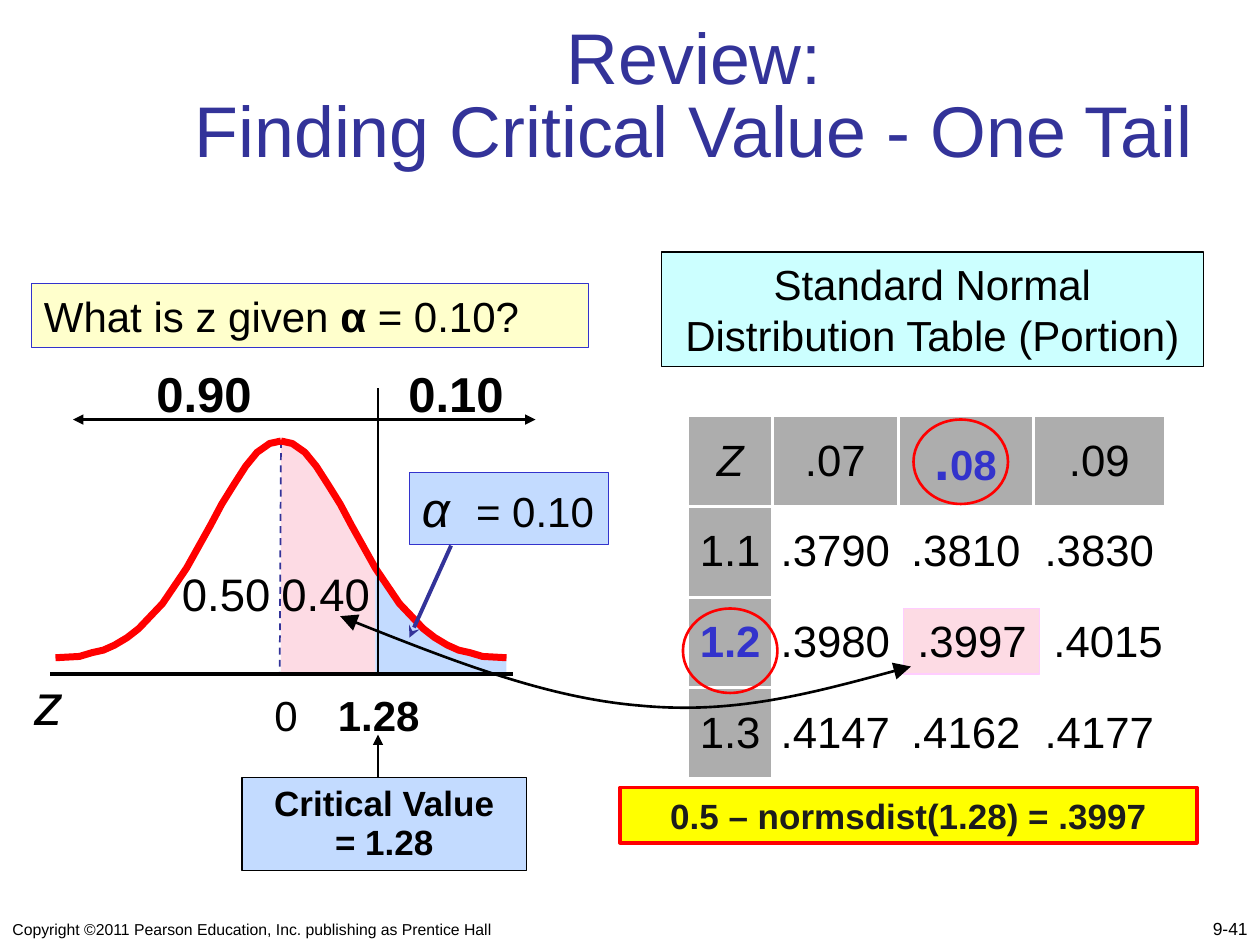
"""Builds the review slide on finding a one-tail critical value."""
from lxml.etree import SubElement
from pptx import Presentation
from pptx.dml.color import RGBColor
from pptx.enum.dml import MSO_LINE
from pptx.enum.shapes import MSO_CONNECTOR, MSO_SHAPE
from pptx.enum.text import MSO_ANCHOR, PP_ALIGN
from pptx.oxml.ns import qn
from pptx.util import Emu, Inches, Pt

BLACK = RGBColor(0, 0, 0)
INK = RGBColor(0x1C, 0x1C, 0x1C)
WHITE = RGBColor(0xFF, 0xFF, 0xFF)
NAVY = RGBColor(0x33, 0x33, 0x99)
BLUE = RGBColor(0x33, 0x33, 0xCC)
RED = RGBColor(0xFF, 0, 0)
GRAY = RGBColor(0xAD, 0xAD, 0xAD)
PINK = RGBColor(0xFD, 0xDB, 0xE4)
ROSE = RGBColor(0xFF, 0xCD, 0xFF)
SKY = RGBColor(0xC3, 0xDB, 0xFF)
AQUA = RGBColor(0xCC, 0xFF, 0xFF)
CREAM = RGBColor(0xFF, 0xFF, 0xCC)
YELLOW = RGBColor(0xFF, 0xFF, 0)
LEFT, MID, RIGHT = PP_ALIGN.LEFT, PP_ALIGN.CENTER, PP_ALIGN.RIGHT

TITLE = ["Review:", "Finding Critical Value - One Tail"]
TABLE = [
    ["Z", ".07", ".08", ".09"],
    ["1.1", ".3790", ".3810", ".3830"],
    ["1.2", ".3980", ".3997", ".4015"],
    ["1.3", ".4147", ".4162", ".4177"],
]
WIDTHS, HIGH = [0.67, 1, 1.07, 1.05], 0.72
SPECIAL = {
    (0, 0): [("Z", 25, BLACK, "i")],
    (0, 2): [(".", 32, BLUE, "b"), ("08", 24, BLUE, "b")],
    (2, 0): [("1.2", 25, BLUE, "b")],
}
SHIFT = {(2, 2): 0.1, (2, 3): 0.14}

PEAK, BASE, CUT = 2.23, 5.35, 0.75
BELL = [(0, 3.5), (0.09, 3.52), (0.19, 3.59), (0.28, 3.7), (0.37, 3.84),
        (0.47, 4), (0.56, 4.17), (0.75, 4.51), (0.94, 4.79), (1.13, 4.99),
        (1.22, 5.06), (1.32, 5.12), (1.41, 5.16), (1.5, 5.18), (1.6, 5.21),
        (1.79, 5.22)]
SWEEP = [(2.7, 4.89), (3.55, 5.23), (4.35, 5.54), (5.08, 5.6),
         (5.82, 5.67), (6.49, 5.49), (7.23, 5.29)]

LABELS = [
    ((0, 7.17, 5.08, 0.33), LEFT, MSO_ANCHOR.BOTTOM, [(
        "Copyright ©2011 Pearson Education, Inc. publishing as Prentice Hall",
        9, BLACK, "")]),
    ((7.92, 7.16, 2.08, 0.34), RIGHT, MSO_ANCHOR.BOTTOM, [("9-41", 10, BLACK, "")]),
    ((0.17, 5.25, 0.43, 0.65), MID, MSO_ANCHOR.MIDDLE, [("z", 33, BLACK, "i")]),
    ((2.08, 5.42, 0.38, 0.5), MID, MSO_ANCHOR.MIDDLE, [("0", 24, BLACK, "")]),
    ((2.58, 5.42, 0.85, 0.5), MID, MSO_ANCHOR.MIDDLE, [("1.28", 24, BLACK, "b")]),
    ((1.14, 2.83, 0.96, 0.57), MID, MSO_ANCHOR.MIDDLE, [("0.90", 28, BLACK, "b")]),
    ((3.14, 2.83, 0.96, 0.57), MID, MSO_ANCHOR.MIDDLE, [("0.10", 28, BLACK, "b")]),
    ((1.34, 4.44, 0.91, 0.53), MID, MSO_ANCHOR.MIDDLE, [("0.50", 26, BLACK, "")]),
    ((2.13, 4.44, 0.91, 0.53), MID, MSO_ANCHOR.MIDDLE, [("0.40", 26, BLACK, "")]),
]
BOXES = [
    ((5.25, 2, 4.3, 0.91), AQUA, BLACK, 0.75, MID,
     [[("Standard Normal Distribution Table (Portion)", 24, BLACK, "")]]),
    ((0.25, 2.25, 4.42, 0.51), CREAM, BLUE, 0.75, LEFT,
     [[("What is z given ", 24, BLACK, ""), ("α", 24, BLACK, "b"),
       (" = 0.10?", 24, BLACK, "")]]),
    ((3.25, 3.75, 1.58, 0.57), SKY, BLUE, 0.75, LEFT,
     [[("α\t", 28, BLACK, "i"), ("= 0.10", 24, BLACK, "")]]),
    ((1.92, 6.17, 2.26, 0.74), SKY, BLACK, 0.75, MID,
     [[("Critical Value", 20, BLACK, "b")], [("= 1.28", 20, BLACK, "b")]]),
    ((4.92, 6.25, 4.58, 0.44), YELLOW, RED, 2, MID,
     [[("0.5 – normsdist(1.28) = .3997", 20, INK, "b")]]),
]
LINES = [
    ((3.58, 4.33), (3.25, 5.06), NAVY, 2.25, "stealth"),
    ((0.4, BASE), (4.07, BASE), BLACK, 2.25, None),
    ((3, 5.33), (3, 3.08), BLACK, 1.5, None),
    ((3, 3.33), (0.58, 3.33), BLACK, 1.5, "triangle"),
    ((3, 3.33), (4.25, 3.33), BLACK, 1.5, "triangle"),
    ((3, 6.17), (3, 5.83), BLACK, 1.5, "triangle"),
]
RINGS = [(5.42, 4.83, 0.75, 0.67), (7.25, 3.33, 0.75, 0.67)]

deck = Presentation()
deck.slide_width, deck.slide_height = Inches(10), Inches(7.5)
slide = deck.slides.add_slide(deck.slide_layouts[5])
shapes = slide.shapes


def grid(*units):
    return [Emu(round(n * deck.slide_width / 10)) for n in units]


def write(para, runs, align):
    para.alignment = align
    for text, size, color, style in runs:
        run = para.add_run()
        run.text = text
        font = run.font
        font.name, font.size, font.color.rgb = "Arial", Pt(size), color
        font.bold, font.italic = "b" in style, "i" in style


def paint(shape, fill, edge=None, width=1):
    shape.shadow.inherit = False
    if fill is None:
        shape.fill.background()
    else:
        shape.fill.solid()
        shape.fill.fore_color.rgb = fill
    if edge is None:
        shape.line.fill.background()
    else:
        shape.line.color.rgb, shape.line.width = edge, Pt(width)
    return shape


def trace(points, close, *look):
    pen = shapes.build_freeform(*grid(*points[0]), scale=1.0)
    pen.add_line_segments([grid(*p) for p in points[1:]], close=close)
    return paint(pen.convert_to_shape(), *look)


def tip(line, end, kind, size="med"):
    SubElement(line.line._get_or_add_ln(), qn("a:" + end), type=kind, w=size, len=size)


def link(start, stop, color, width, kind=None):
    line = shapes.add_connector(MSO_CONNECTOR.STRAIGHT, *grid(*start, *stop))
    line.line.color.rgb, line.line.width = color, Pt(width)
    if kind:
        tip(line, "tailEnd", kind)
    SubElement(line._element.spPr, qn("a:effectLst"))
    return line


def frame(cell):
    props = cell._tc.get_or_add_tcPr()
    for side in "LRTB":
        edge = SubElement(props, qn("a:ln" + side), w=str(Pt(2)))
        SubElement(SubElement(edge, qn("a:solidFill")), qn("a:srgbClr"), val=str(WHITE))


title = shapes.title
title.left, title.top, title.width, title.height = grid(1.25, 0.17, 8.52, 1.25)
title.text_frame.vertical_anchor = MSO_ANCHOR.BOTTOM
head = title.text_frame.paragraphs[0]
head.line_spacing = 0.85
write(head, [(TITLE[0], 41, NAVY, "")], MID)
head.add_line_break()
write(head, [(TITLE[1], 41, NAVY, "")], MID)

paint(shapes.add_shape(MSO_SHAPE.RECTANGLE, *grid(7.17, 4.83, 1.08, 0.52)), PINK, ROSE, 0.75)
table = shapes.add_table(4, 4, *grid(5.46, 3.3, sum(WIDTHS), 4 * HIGH)).table
table._tbl.tblPr.find(qn("a:tableStyleId")).text = "{2D5ABB26-0587-4C30-8999-92F81FD0307C}"
for c, wide in enumerate(WIDTHS):
    table.columns[c].width = grid(wide)[0]
for r, row in enumerate(TABLE):
    table.rows[r].height = grid(HIGH)[0]
    for c, text in enumerate(row):
        cell = table.cell(r, c)
        cell.margin_left = grid(SHIFT.get((r, c), 0))[0]
        cell.margin_right = cell.margin_top = cell.margin_bottom = 0
        cell.vertical_anchor = MSO_ANCHOR.MIDDLE
        if r == 0 or c == 0:
            frame(cell)
            cell.fill.solid()
            cell.fill.fore_color.rgb = GRAY
        else:
            cell.fill.background()
        runs = SPECIAL.get((r, c), [(text, 25, BLACK, "")])
        write(cell.text_frame.paragraphs[0], runs, MID)

half = [(PEAK + d, y) for d, y in BELL]
edge = PEAK + CUT
trace([p for p in half if p[0] <= edge] + [(edge, BASE), (PEAK, BASE)], True, PINK)
trace([p for p in half if p[0] >= edge] + [(half[-1][0], BASE), (edge, BASE)], True, SKY)
link(half[0], (PEAK - 0.01, BASE), NAVY, 1).line.dash_style = MSO_LINE.DASH
for sign in (1, -1):
    trace([(PEAK + sign * d, y) for d, y in BELL], False, None, RED, 4)

for place, fill, color, width, align, paras in BOXES:
    box = paint(shapes.add_shape(MSO_SHAPE.RECTANGLE, *grid(*place)), fill, color, width)
    body = box.text_frame
    body.word_wrap, body.vertical_anchor = True, MSO_ANCHOR.MIDDLE
    for i, runs in enumerate(paras):
        para = body.add_paragraph() if i else body.paragraphs[0]
        if "\t" in runs[0][0]:
            stops = SubElement(para._p.get_or_add_pPr(), qn("a:tabLst"))
            SubElement(stops, qn("a:tab"), pos=str(grid(0.43)[0]), algn="l")
        if len(paras) > 1:
            para.line_spacing = 0.95
        write(para, runs, align)

for line in LINES:
    link(*line)
for place, align, anchor, runs in LABELS:
    body = shapes.add_textbox(*grid(*place)).text_frame
    body.word_wrap, body.vertical_anchor = align != MID, anchor
    write(body.paragraphs[0], runs, align)

sweep = trace(SWEEP, False, None, BLACK, 1.5)
steps = list(sweep._element.iter(qn("a:lnTo")))
for i in range(0, len(steps), 3):
    bend = SubElement(steps[i].getparent(), qn("a:cubicBezTo"))
    for step in steps[i:i + 3]:
        bend.append(step[0])
        step.getparent().remove(step)
for end in ("headEnd", "tailEnd"):
    tip(sweep, end, "triangle", "lg")
for ring in RINGS:
    paint(shapes.add_shape(MSO_SHAPE.OVAL, *grid(*ring)), None, RED, 1.5)

deck.save("out.pptx")
